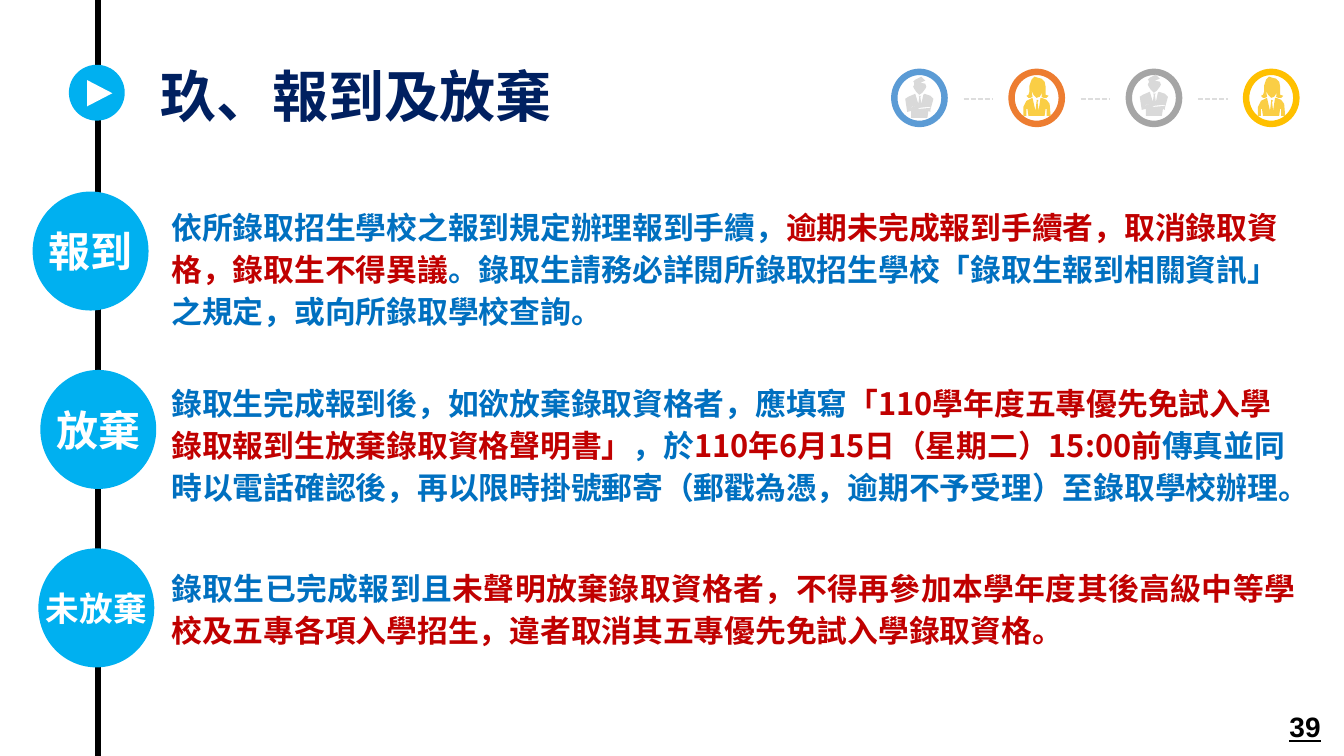
from lxml.etree import SubElement
from pptx import Presentation
from pptx.dml.color import RGBColor
from pptx.enum.dml import MSO_LINE
from pptx.enum.shapes import MSO_CONNECTOR, MSO_SHAPE
from pptx.enum.text import MSO_ANCHOR, MSO_AUTO_SIZE, PP_ALIGN
from pptx.oxml.ns import qn
from pptx.util import Pt

CJK = "Noto Sans CJK SC"
BLACK = RGBColor(0x00, 0x00, 0x00)
WHITE = RGBColor(0xFF, 0xFF, 0xFF)
NAVY = RGBColor(0x00, 0x20, 0x60)
BLUE = RGBColor(0x00, 0x70, 0xC0)
RED = RGBColor(0xC0, 0x00, 0x00)
SKY = RGBColor(0x00, 0xB0, 0xF0)
DASH_GREY = RGBColor(0xDD, 0xDD, 0xDD)
MAN_GREY = RGBColor(0xD9, 0xD9, 0xD9)
WOMAN_GOLD = RGBColor(0xFA, 0xCE, 0x45)
RING_BLUE = RGBColor(0x5B, 0x9B, 0xD5)
RING_ORANGE = RGBColor(0xED, 0x7D, 0x31)
RING_GREY = RGBColor(0xA5, 0xA5, 0xA5)
RING_YELLOW = RGBColor(0xFF, 0xC0, 0x00)

# Icon outlines, in units of 0.72 pt from the corner of the ring
ICON_UNIT = Pt(0.72)
MAN_HEAD = [[(23, 16), (22, 18), (23, 20), (25, 23), (28, 26), (31, 24), (34, 20), (35, 18),
             (34, 15), (29, 14), (34, 12), (30, 8), (24, 11), (22, 13), (23, 14)]]
MAN_BODY = [[(39, 41), (42, 30), (39, 27), (33, 25), (32, 26), (30, 35), (29, 28), (30, 27),
             (27, 27), (28, 28), (27, 35), (24, 25), (17, 28), (14, 30), (16, 43), (20, 42),
             (20, 49), (36, 49), (37, 42), (39, 43)],
            [(20, 38), (27, 37), (32, 37), (28, 37), (17, 39)],
            [(28, 40), (26, 40), (28, 39), (37, 38), (39, 38), (39, 39)]]
WOMAN_HAIR = [[(18, 27), (20, 29), (22, 29), (24, 28), (23, 22), (25, 26), (28, 29), (31, 28),
               (33, 25), (34, 21), (33, 28), (35, 29), (38, 29), (40, 27), (37, 26), (37, 18),
               (36, 13), (33, 10), (29, 9), (26, 8), (23, 11), (21, 17), (21, 23), (20, 26)]]
WOMAN_BODY = [[(15, 38), (15, 47), (18, 47), (18, 40), (19, 40), (20, 47), (36, 47), (37, 40),
               (38, 40), (38, 47), (42, 47), (41, 35), (38, 31), (33, 29), (32, 29), (30, 42),
               (29, 33), (30, 32), (29, 31), (28, 31), (28, 33), (27, 42), (24, 29), (18, 32)]]
MAN = (MAN_GREY, [MAN_HEAD, MAN_BODY])
WOMAN = (WOMAN_GOLD, [WOMAN_BODY, WOMAN_HAIR])

# Ring colour, figure, vertical shift of the figure
ICONS = [(RING_BLUE, MAN, Pt(0)), (RING_ORANGE, WOMAN, Pt(0)),
         (RING_GREY, MAN, Pt(-1.44)), (RING_YELLOW, WOMAN, Pt(0))]

# Label, left edge, text size
STEPS = [("報到", 23.3, 30), ("放棄", 28.8, 30), ("未放棄", 27.4, 24)]

# Runs, space before, space after, alignment
RULES = [
    ([("依所錄取招生學校之報到規定辦理報到手續，", BLUE),
      ("逾期未完成報到手續者，取消錄取資格，錄取生不得異議", RED),
      ("。錄取生請務必詳閱所錄取招生學校「錄取生報到相關資訊」之規定，或向所錄取學校查詢。", BLUE)],
     0, 24, PP_ALIGN.LEFT),
    ([("錄取生完成報到後，如欲放棄錄取資格者，應填寫", BLUE),
      ("「110學年度五專優先免試入學錄取報到生放棄錄取資格聲明書」", RED),
      ("，於", BLUE),
      ("110年6月15日（星期二）15:00前", RED),
      ("傳真並同時以電話確認後，再以限時掛號郵寄（郵戳為憑，逾期不予受理）至錄取學校辦理。", BLUE)],
     12, 6, PP_ALIGN.LEFT),
    ([("錄取生已完成報到且", BLUE),
      ("未聲明放棄錄取資格者，不得再參加本學年度其後高級中等學校及五專各項入學招生，"
       "違者取消其五專優先免試入學錄取資格。", RED)],
     36, 6, PP_ALIGN.JUSTIFY),
]


def add_text(paragraph, text, *, size, color, font=CJK, underline=None):
    run = paragraph.add_run()
    run.text = text
    run.font.name = font
    run.font.size = Pt(size)
    run.font.bold = True
    run.font.underline = underline
    run.font.color.rgb = color
    SubElement(run._r.get_or_add_rPr(), qn("a:ea")).set("typeface", font)


def place(shape, left, top, width, height):
    shape.left, shape.top = Pt(left), Pt(top)
    shape.width, shape.height = Pt(width), Pt(height)


def paint(shape, color):
    shape.shadow.inherit = False
    shape.fill.solid()
    shape.fill.fore_color.rgb = color
    shape.line.fill.background()


def add_filled(slide, kind, left, top, width, height, color):
    shape = slide.shapes.add_shape(kind, Pt(left), Pt(top), Pt(width), Pt(height))
    paint(shape, color)
    return shape


def add_line(slide, start, end, color, width):
    line = slide.shapes.add_connector(MSO_CONNECTOR.STRAIGHT, *map(Pt, start + end))
    line.line.color.rgb = color
    line.line.width = Pt(width)
    SubElement(line._element.spPr, qn("a:effectLst"))
    return line


def add_outline(slide, contours, left, top, color):
    builder = slide.shapes.build_freeform(*contours[0][0], scale=ICON_UNIT)
    builder.add_line_segments(contours[0][1:], close=True)
    for contour in contours[1:]:
        builder.move_to(*contour[0])
        builder.add_line_segments(contour[1:], close=True)
    paint(builder.convert_to_shape(left, top), color)


def add_title(slide):
    title = slide.shapes.title
    place(title, 107.3, 34.6, 560.9, 73.4)
    frame = title.text_frame
    frame.auto_size = MSO_AUTO_SIZE.NONE
    frame.vertical_anchor = MSO_ANCHOR.MIDDLE
    paragraph = frame.paragraphs[0]
    paragraph.alignment = PP_ALIGN.LEFT
    paragraph.line_spacing = 0.9
    add_text(paragraph, "玖、報到及放棄", size=40, color=NAVY)


def add_rules(slide):
    body = slide.placeholders[1]
    place(body, 93.6, 141.8, 839.5, 326.2)
    frame = body.text_frame
    frame.auto_size = MSO_AUTO_SIZE.NONE
    for index, (runs, before, after, alignment) in enumerate(RULES):
        paragraph = frame.add_paragraph() if index else frame.paragraphs[0]
        properties = paragraph._p.get_or_add_pPr()
        properties.set("marL", str(Pt(21.6)))
        properties.set("indent", "0")
        SubElement(properties, qn("a:buNone"))
        paragraph.alignment = alignment
        paragraph.line_spacing = Pt(30)
        paragraph.space_before = Pt(before)
        paragraph.space_after = Pt(after)
        for text, color in runs:
            add_text(paragraph, text, size=22, color=color)


def add_step(slide, label, left, top, size):
    circle = add_filled(slide, MSO_SHAPE.OVAL, left, top, 82.8, 85, SKY)
    frame = circle.text_frame
    frame.word_wrap = False
    frame.vertical_anchor = MSO_ANCHOR.MIDDLE
    paragraph = frame.paragraphs[0]
    paragraph.alignment = PP_ALIGN.CENTER
    add_text(paragraph, label, size=size, color=WHITE)


def add_icons(slide):
    for index, (ring_color, (figure_color, outlines), shift) in enumerate(ICONS):
        left, top = 636.5 + index * 83.76, 49
        ring = add_filled(slide, MSO_SHAPE.DONUT, left, top, 40.5, 41.8, ring_color)
        ring.adjustments[0] = 0.114
        for contours in outlines:
            add_outline(slide, contours, Pt(left), Pt(top) + shift, figure_color)
        if index < len(ICONS) - 1:
            dash = add_line(slide, (left + 51.8, 70.6), (left + 72.8, 70.6), DASH_GREY, 1.25)
            dash.line.dash_style = MSO_LINE.SQUARE_DOT
            dash.line._ln.find(qn("a:prstDash")).set("val", "sysDash")


def add_page_number(slide):
    box = slide.shapes.add_textbox(Pt(734.4), Pt(504.7), Pt(216), Pt(28.8))
    frame = box.text_frame
    frame.word_wrap = True
    frame.vertical_anchor = MSO_ANCHOR.MIDDLE
    paragraph = frame.paragraphs[0]
    paragraph.alignment = PP_ALIGN.RIGHT
    add_text(paragraph, "39", size=20, color=BLACK, font="Arial", underline=True)


def main():
    presentation = Presentation()
    presentation.slide_width, presentation.slide_height = Pt(960), Pt(540)
    slide = presentation.slides.add_slide(presentation.slide_layouts[1])

    # Timeline with its play button and steps
    add_line(slide, (69.8, 0), (69.8, 540), BLACK, 4.5)
    add_filled(slide, MSO_SHAPE.OVAL, 49.2, 46.3, 39.9, 39.9, SKY)
    play = add_filled(slide, MSO_SHAPE.ISOSCELES_TRIANGLE, 61.9, 57.6, 18.7, 18, WHITE)
    play.rotation = 90
    for index, (label, left, size) in enumerate(STEPS):
        add_step(slide, label, left, 136.8 + index * 127.44, size)

    # Texts and header icons
    add_title(slide)
    add_rules(slide)
    add_icons(slide)
    add_page_number(slide)
    presentation.save("out.pptx")


if __name__ == "__main__":
    main()
